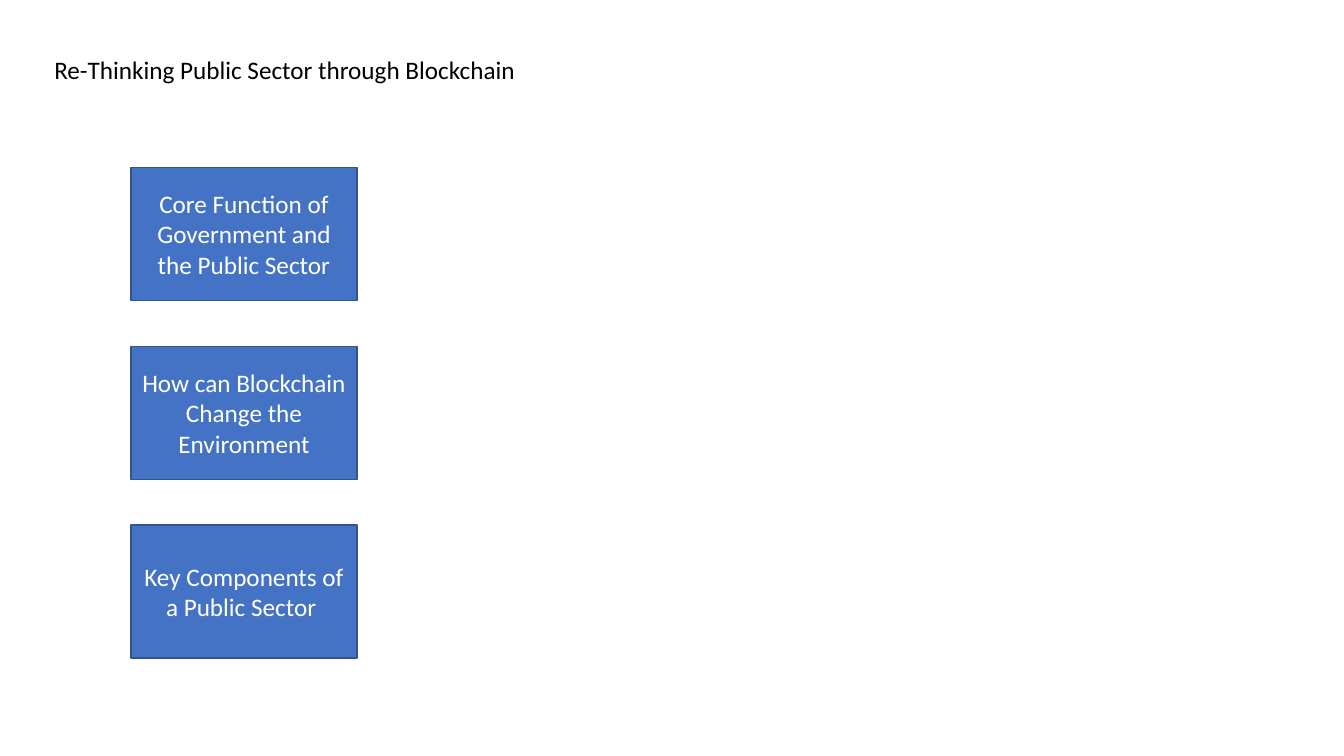
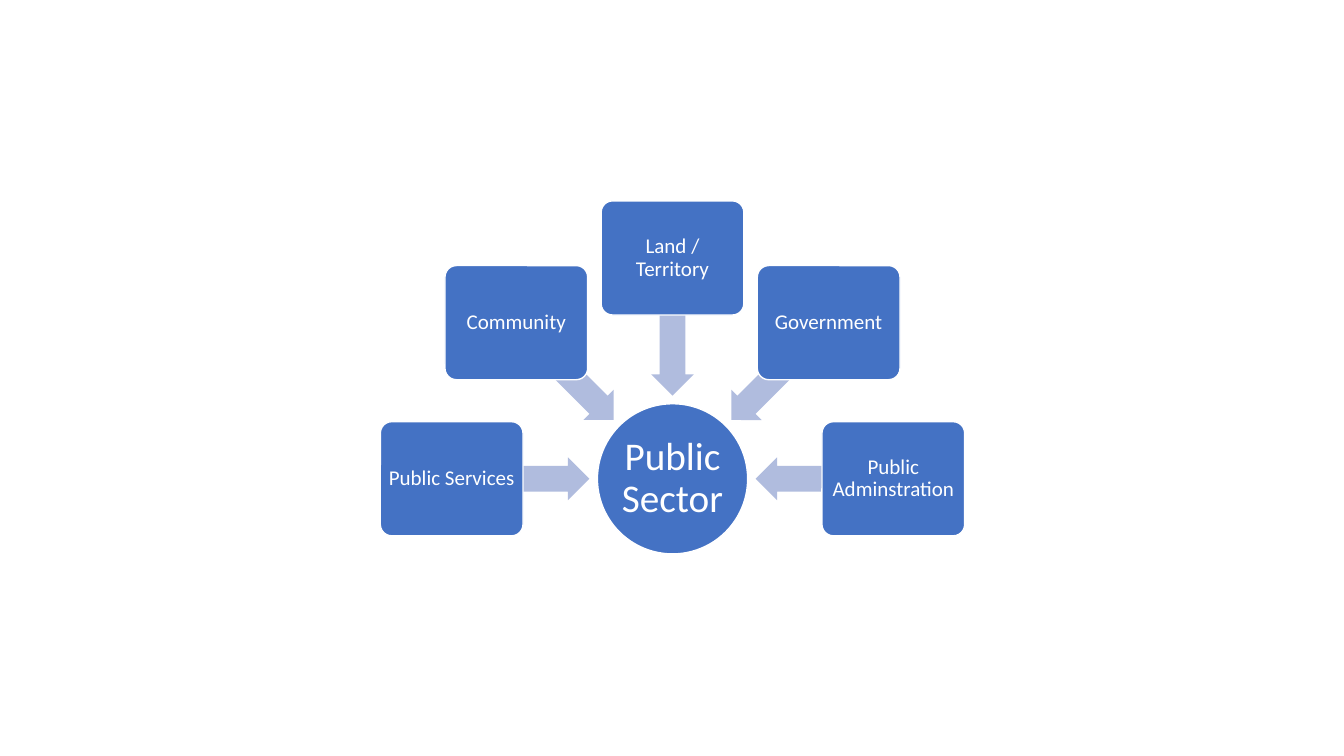
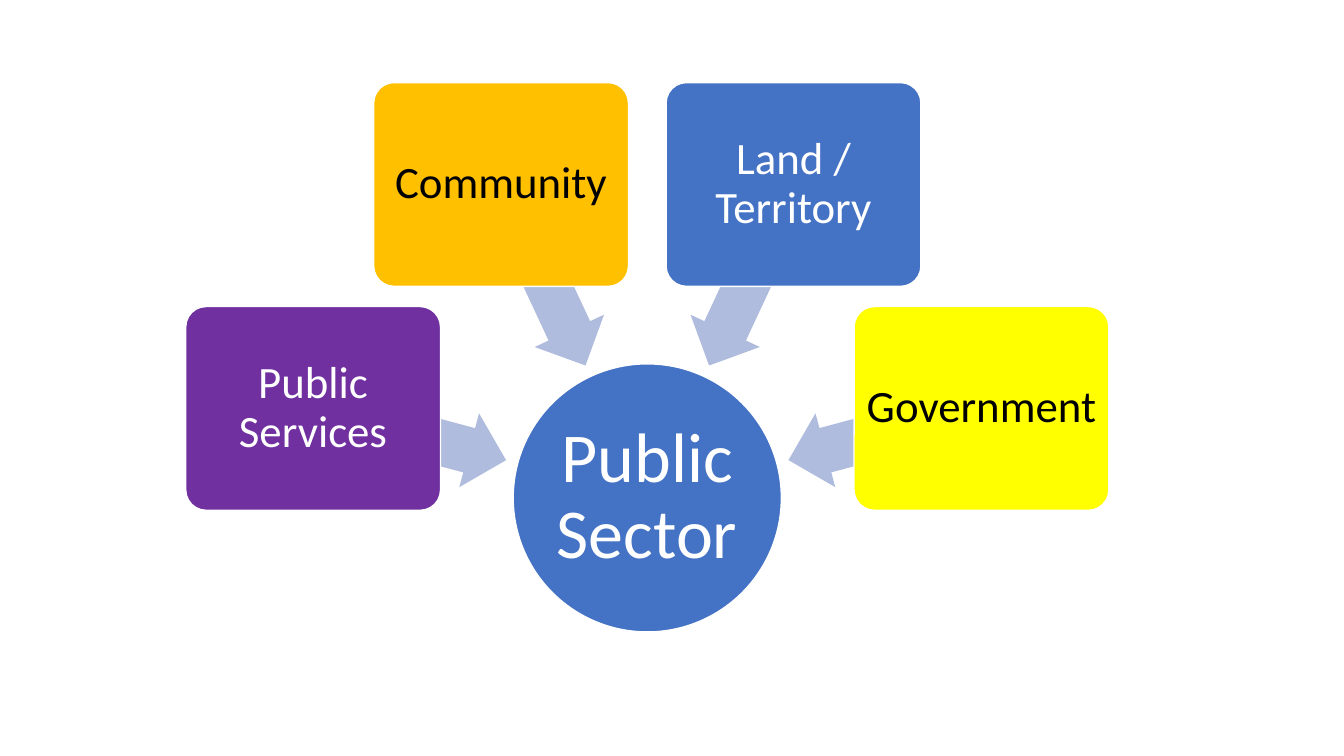
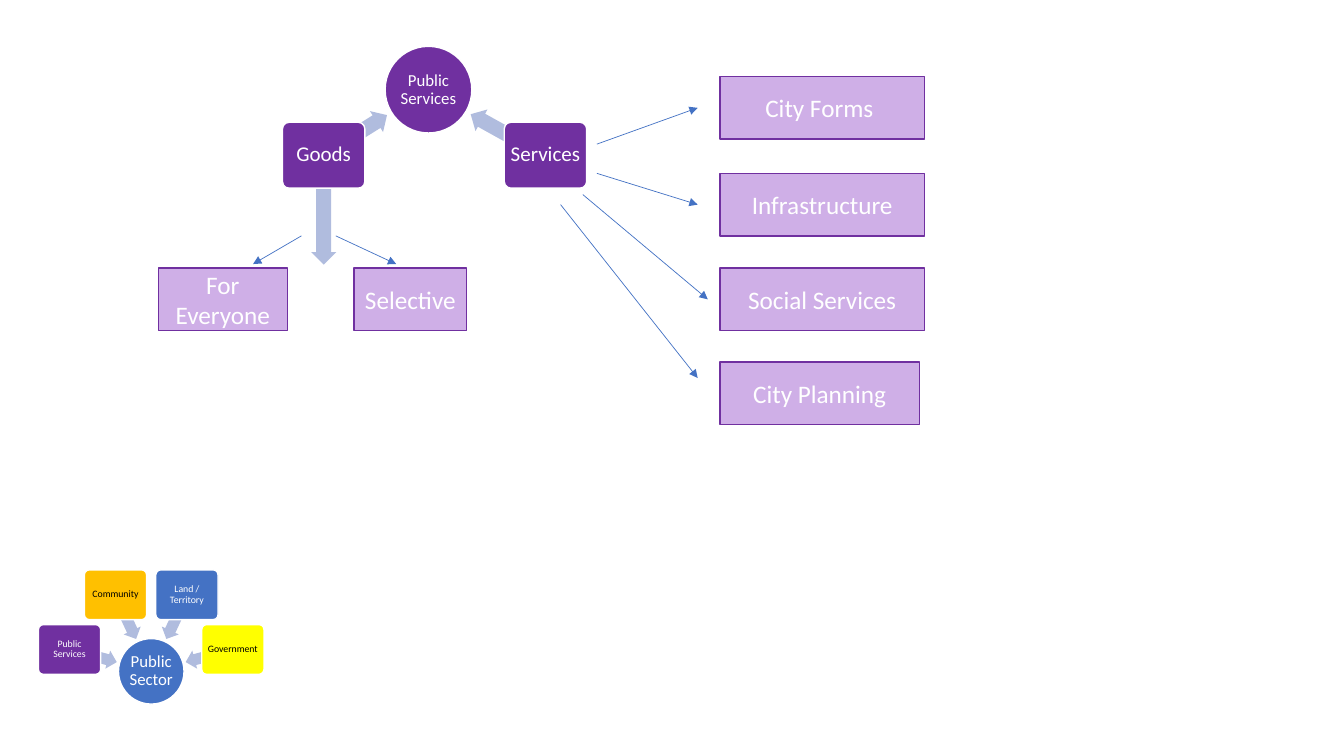
from math import cos, radians, sin

from lxml.etree import SubElement
from pptx import Presentation
from pptx.dml.color import RGBColor
from pptx.enum.shapes import MSO_CONNECTOR, MSO_SHAPE
from pptx.enum.text import MSO_ANCHOR, MSO_AUTO_SIZE, PP_ALIGN
from pptx.oxml.ns import qn
from pptx.util import Inches, Pt

FONT = "Calibri"
BLUE, DARK_BLUE, PALE_BLUE = "4472C4", "325491", "B0BCDE"
PURPLE, LILAC = "7030A0", "CFAFE7"
GOLD, YELLOW = "FFC000", "FFFF00"
BLACK, WHITE = "000000", "FFFFFF"

# Parts of a hub diagram, as shares of the hub diameter
NODE_WIDTH, NODE_HEIGHT, ARROW_HEIGHT = 0.95, 0.76, 0.285

SECTOR_NODES = [
    # angle, label, fill, text colour
    (195, "Public Services", PURPLE, WHITE),
    (245, "Community", GOLD, BLACK),
    (295, "Land / Territory", BLUE, WHITE),
    (345, "Government", YELLOW, BLACK),
]


def rgb(color):
    return RGBColor.from_string(color)


def add_run(paragraph, text, size, color):
    run = paragraph.add_run()
    run.text = text
    run.font.name = FONT
    run.font.size = Pt(size)
    run.font.color.rgb = rgb(color)


def add_label(shape, text, size, color, inset=None, spacing=None):
    """Centre text in a shape; without an inset the usual margins stay."""
    frame = shape.text_frame
    frame.word_wrap = True
    frame.vertical_anchor = MSO_ANCHOR.MIDDLE
    if inset is not None:
        frame.margin_left = frame.margin_right = Inches(inset)
        frame.margin_top = frame.margin_bottom = Inches(inset)
    paragraph = frame.paragraphs[0]
    paragraph.alignment = PP_ALIGN.CENTER
    paragraph.line_spacing = spacing
    add_run(paragraph, text, size, color)


def add_centered(shapes, kind, center, width, height, fill, outline=None):
    x, y = center
    shape = shapes.add_shape(kind, Inches(x - width / 2), Inches(y - height / 2),
                             Inches(width), Inches(height))
    shape.shadow.inherit = False
    shape.fill.solid()
    shape.fill.fore_color.rgb = rgb(fill)
    if outline:
        shape.line.color.rgb = rgb(outline)
        shape.line.width = Pt(1)
    else:
        shape.line.fill.background()
    return shape


def add_box(shapes, left, top, width, height, text, fill, outline):
    center = (left + width / 2, top + height / 2)
    box = add_centered(shapes, MSO_SHAPE.RECTANGLE, center, width, height, fill, outline)
    add_label(box, text, 18, WHITE)


def add_hub(shapes, center, diameter, text, size, fill):
    hub = add_centered(shapes, MSO_SHAPE.OVAL, center, diameter, diameter, fill, WHITE)
    add_label(hub, text, size, WHITE, inset=size * 0.0007, spacing=0.9)


def add_node(shapes, center, hub, text, size, fill, color=WHITE):
    node = add_centered(shapes, MSO_SHAPE.ROUNDED_RECTANGLE, center,
                        hub * NODE_WIDTH, hub * NODE_HEIGHT, fill, WHITE)
    node.adjustments[0] = 0.1
    add_label(node, text, size, color, inset=size * 0.002, spacing=0.9)


def add_block_arrow(shapes, center, length, height, rotation):
    arrow = add_centered(shapes, MSO_SHAPE.LEFT_ARROW, center, length, height, PALE_BLUE)
    arrow.adjustments[0] = 0.6
    arrow.adjustments[1] = 0.5
    arrow.rotation = rotation


def add_thin_arrow(shapes, start, end):
    arrow = shapes.add_connector(MSO_CONNECTOR.STRAIGHT,
                                 *(Inches(value) for value in start + end))
    arrow.line.color.rgb = rgb(BLUE)
    arrow.line.width = Pt(0.5)
    properties = arrow._element.spPr
    SubElement(properties.find(qn("a:ln")), qn("a:tailEnd"), type="triangle")
    SubElement(properties, qn("a:effectLst"))


def on_circle(center, radius, angle):
    x, y = center
    return x + radius * cos(radians(angle)), y + radius * sin(radians(angle))


def add_radial(slide, center, hub, hub_size, node_size, nodes,
               node_radius=1.29, arrow_radius=0.917, arrow_length=0.744):
    """Nodes around a hub; radii and arrow length are in hub diameters."""
    shapes = slide.shapes.add_group_shape().shapes
    add_hub(shapes, center, hub, "Public Sector", hub_size, BLUE)
    for angle, text, fill, color in nodes:
        add_block_arrow(shapes, on_circle(center, hub * arrow_radius, angle),
                        hub * arrow_length, hub * ARROW_HEIGHT, angle)
        add_node(shapes, on_circle(center, hub * node_radius, angle),
                 hub, text, node_size, fill, color)


def build_agenda(slide):
    title = slide.shapes.add_textbox(Inches(0.44), Inches(0.49), Inches(4.83), Inches(0.4))
    title.text_frame.word_wrap = False
    title.text_frame.auto_size = MSO_AUTO_SIZE.SHAPE_TO_FIT_TEXT
    add_run(title.text_frame.paragraphs[0],
            "Re-Thinking Public Sector through Blockchain", 18, BLACK)
    topics = [
        "Core Function of Government and the Public Sector",
        "How can Blockchain Change the Environment",
        "Key Components of a Public Sector ",
    ]
    for row, topic in enumerate(topics):
        add_box(slide.shapes, 1.3, 1.66 + row * 1.775, 2.24, 1.32, topic, BLUE, DARK_BLUE)


def build_components(slide):
    labels = ["Public Services", "Community", "Land / Territory",
              "Government", "Public Adminstration"]
    nodes = [(180 + 45 * step, label, BLUE, WHITE) for step, label in enumerate(labels)]
    add_radial(slide, (6.67, 4.75), 1.49, 28, 15, nodes,
               node_radius=1.47, arrow_radius=1.01, arrow_length=0.913)


def build_sector(slide):
    add_radial(slide, (6.42, 4.94), 2.66, 50, 32, SECTOR_NODES)


def add_services_hub(slide):
    shapes = slide.shapes.add_group_shape().shapes
    hub = 0.86
    add_hub(shapes, (4.25, 0.89), hub, "Public Services", 12, PURPLE)
    branches = [
        # label, node x, arrow centre, arrow length, rotation
        ("Goods", 3.21, (3.52, 1.34), 0.75, 148),
        ("Services", 5.41, (5.04, 1.34), 0.85, 29.1),
    ]
    for label, x, arrow_center, length, rotation in branches:
        add_block_arrow(shapes, arrow_center, length, hub * ARROW_HEIGHT, rotation)
        add_node(shapes, (x, 1.54), hub, label, 15, PURPLE)


def build_services(slide):
    add_radial(slide, (1.5, 6.66), 0.65, 12, 7, SECTOR_NODES)
    add_services_hub(slide)
    shapes = slide.shapes
    add_block_arrow(shapes, (3.21, 2.25), 0.75, 0.25, 270)
    examples = [
        # label, left, top, width, arrow start, arrow end
        ("For Everyone", 1.57, 2.66, 1.28, (2.99, 2.34), (2.51, 2.62)),
        ("Selective", 3.51, 2.66, 1.12, (3.33, 2.34), (3.93, 2.62)),
        ("City Forms ", 7.14, 0.76, 2.03, (5.92, 1.43), (6.92, 1.07)),
        ("Infrastructure", 7.14, 1.72, 2.03, (5.92, 1.72), (6.92, 2.03)),
        ("Social Services", 7.14, 2.66, 2.03, (5.78, 1.93), (7.02, 2.97)),
        ("City Planning", 7.14, 3.59, 1.98, (5.56, 2.03), (6.92, 3.75)),
    ]
    for label, left, top, width, start, end in examples:
        add_box(shapes, left, top, width, 0.62, label, LILAC, PURPLE)
        add_thin_arrow(shapes, start, end)


def main():
    deck = Presentation()
    deck.slide_width, deck.slide_height = Inches(13.33), Inches(7.5)
    blank = deck.slide_layouts[6]
    for build in (build_agenda, build_components, build_sector, build_services):
        build(deck.slides.add_slide(blank))
    deck.save("out.pptx")


if __name__ == "__main__":
    main()
